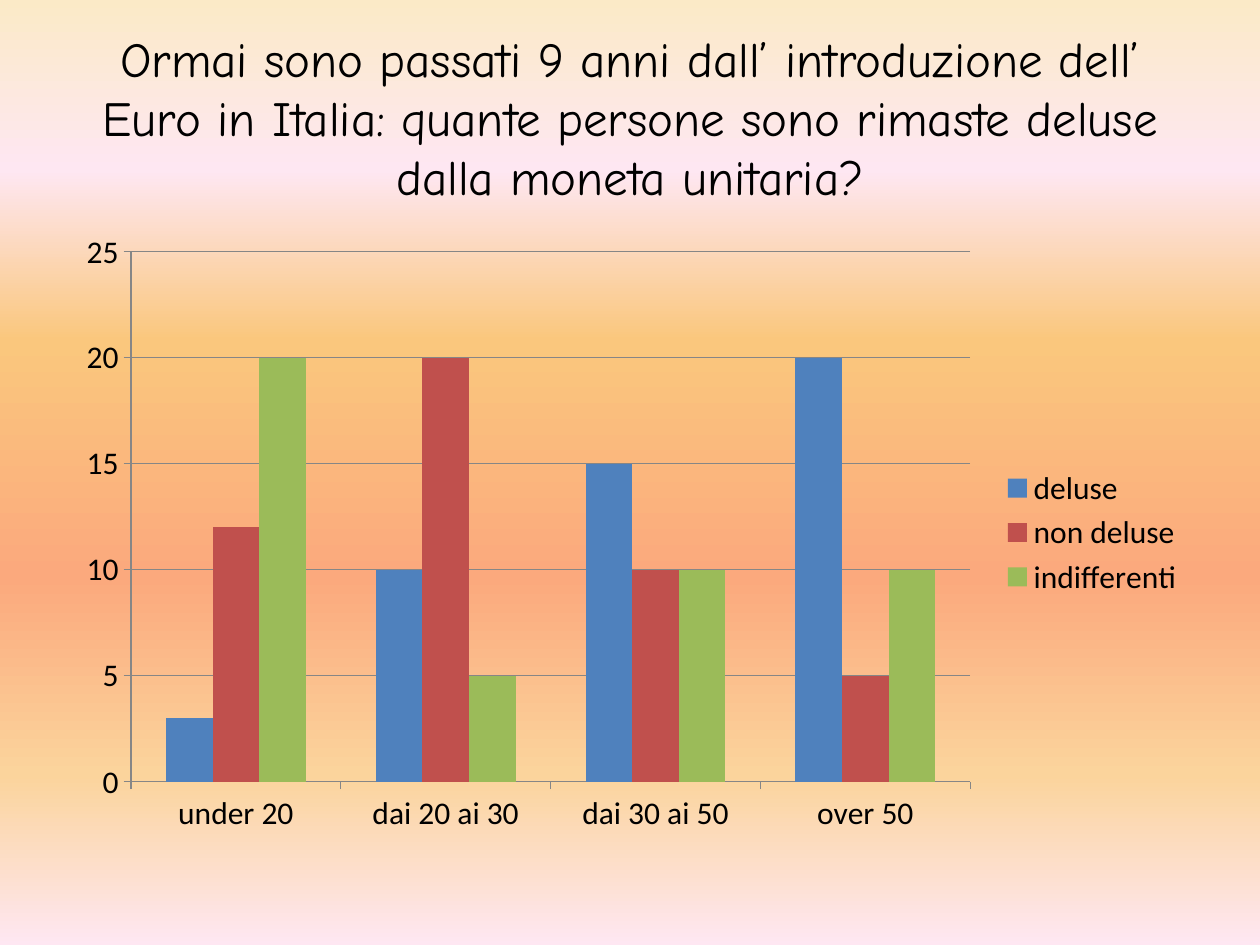
from lxml import etree
from pptx import Presentation
from pptx import util as u
from pptx.chart.data import CategoryChartData
from pptx.dml.color import RGBColor
from pptx.enum import chart as c
from pptx.enum import text as t
from pptx.oxml import parse_xml
from pptx.oxml.ns import nsdecls, qn

TITLE = ("Ormai sono passati 9 anni dall’ introduzione dell’ Euro in Italia: "
         "quante persone sono rimaste deluse dalla moneta unitaria?")
BACKGROUND = [(0, "FBEAC7"), (18, "FEE7F2"), (36, "FAC77D"),
              (61, "FBA97D"), (82, "FBD49C"), (100, "FEE7F2")]
AGES = ["under 20", "dai 20 ai 30", "dai 30 ai 50", "over 50"]
OPINIONS = [("deluse", (3, 10, 15, 20), "4F81BD"),
            ("non deluse", (12, 20, 10, 5), "C0504D"),
            ("indifferenti", (20, 5, 10, 10), "9BBB59")]
PLOT_AREA = {"x": 0.06, "y": 0.05, "w": 0.74, "h": 0.85}
AXIS_GREY = "868686"


def color(value):
    """Return the colour for a hex string."""
    return RGBColor.from_string(value)


def set_font(font, name, size):
    """Apply a black font of the given name and size."""
    font.name = name
    font.size = u.Pt(size)
    font.color.rgb = color("000000")


def set_background(slide, stops):
    """Fill the slide background with a gradient running from top to bottom."""
    fill = slide.background.fill
    fill.gradient()
    fill.gradient_angle = 270
    stop_list = next(slide.element.iter(qn("a:gsLst")))
    for stop in list(stop_list):
        stop_list.remove(stop)
    for percent, value in stops:
        stop = etree.SubElement(stop_list, qn("a:gs"), pos=str(percent * 1000))
        etree.SubElement(stop, qn("a:srgbClr"), val=value)


def set_title(slide, words):
    """Place and format the title placeholder."""
    title = slide.shapes.title
    title.left, title.top = u.Cm(1.27), u.Cm(0.76)
    title.width, title.height = u.Cm(22.86), u.Cm(3.18)
    frame = title.text_frame
    frame.text = words
    frame.vertical_anchor = t.MSO_ANCHOR.MIDDLE
    paragraph = frame.paragraphs[0]
    paragraph.alignment = t.PP_ALIGN.CENTER
    set_font(paragraph.font, "Comic Neue", 28)


def set_line(line):
    """Draw a chart line in thin grey."""
    line.color.rgb = color(AXIS_GREY)
    line.width = u.Pt(0.75)


def set_plot_area(chart, fractions):
    """Fix the inner plot area as fractions of the chart."""
    parts = "".join(f'<c:{key} val="{value}"/>' for key, value in fractions.items())
    layout = parse_xml(
        f'<c:layout {nsdecls("c")}><c:manualLayout><c:layoutTarget val="inner"/>'
        f'<c:xMode val="edge"/><c:yMode val="edge"/>{parts}</c:manualLayout></c:layout>')
    plot_area = next(chart.element.iter(qn("c:plotArea")))
    for previous in plot_area.findall(qn("c:layout")):
        plot_area.remove(previous)
    plot_area.insert(0, layout)


def add_column_chart(slide, categories, series_list):
    """Add the clustered column chart with its legend."""
    data = CategoryChartData()
    data.categories = categories
    for name, values, _ in series_list:
        data.add_series(name, values)
    chart = slide.shapes.add_chart(
        c.XL_CHART_TYPE.COLUMN_CLUSTERED, u.Cm(1.27), u.Cm(4.45),
        u.Cm(22.86), u.Cm(12.57), data).chart
    set_font(chart.font, "Calibri", 18)
    chart.has_title = False
    chart.has_legend = True
    chart.legend.position = c.XL_LEGEND_POSITION.RIGHT
    chart.legend.include_in_layout = False
    plot = chart.plots[0]
    plot.gap_width = 150
    plot.overlap = 0
    plot.vary_by_categories = False
    for series, (_, _, value) in zip(plot.series, series_list):
        series.format.fill.solid()
        series.format.fill.fore_color.rgb = color(value)
    for axis in (chart.category_axis, chart.value_axis):
        axis.major_tick_mark = c.XL_TICK_MARK.OUTSIDE
        set_line(axis.format.line)
    value_axis = chart.value_axis
    value_axis.minimum_scale, value_axis.maximum_scale = 0, 25
    value_axis.major_unit = 5
    set_line(value_axis.major_gridlines.format.line)
    set_plot_area(chart, PLOT_AREA)


def main():
    """Build and save the slide."""
    presentation = Presentation()
    presentation.slide_width, presentation.slide_height = u.Cm(25.4), u.Cm(19.05)
    slide = presentation.slides.add_slide(presentation.slide_layouts[5])
    set_background(slide, BACKGROUND)
    set_title(slide, TITLE)
    add_column_chart(slide, AGES, OPINIONS)
    presentation.save("out.pptx")


if __name__ == "__main__":
    main()
